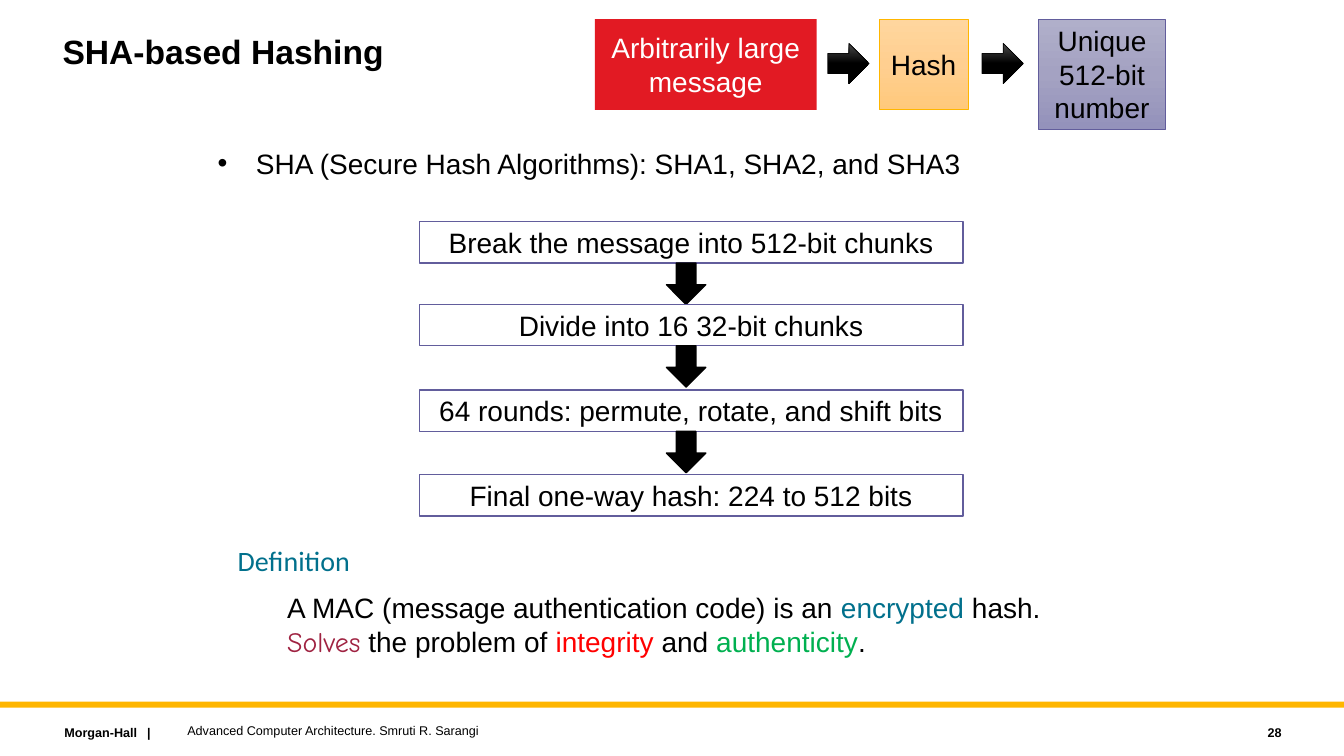
import pptx
import pptx.dml.color
import pptx.enum.shapes
import pptx.enum.text
import pptx.oxml
import pptx.oxml.ns
import pptx.util

KIND = pptx.enum.shapes.MSO_SHAPE
ALIGN = pptx.enum.text.PP_ALIGN
ANCHOR = pptx.enum.text.MSO_ANCHOR
NS = pptx.oxml.ns.nsdecls("a")

BLACK, WHITE = "000000", "FFFFFF"
TEAL, GOLD, VIOLET = "01708C", "FFB600", "625D9C"
INK = (0, "4B4B4B"), (50, BLACK), (100, BLACK)
PEACH = (0, "FFD69E"), (50, "FFCF90"), (100, "FFC97C")
LILAC = (0, "B0AFCA"), (50, "A4A2C2"), (100, "9492BB")


def px(*lengths):
    """Turn lengths at 100 px to the inch into EMU."""
    return [n * 9144 for n in lengths]


def rgb(code):
    return pptx.dml.color.RGBColor.from_string(code)


def make(xml):
    return pptx.oxml.parse_xml(xml)


class Deck:
    def __init__(self):
        self.font, self.size = "Arial", 20
        self.show = pptx.Presentation()
        self.show.slide_width, self.show.slide_height = px(1333, 750)
        self.slide = self.show.slides.add_slide(self.show.slide_layouts[5])

    def fill_text(self, frame, lines, size=None, bold=False, align=ALIGN.LEFT,
                  anchor=ANCHOR.TOP, wrap=True):
        """Fill a frame; each line is a list of (text, colour[, font]) runs."""
        frame.word_wrap = wrap
        frame.auto_size = pptx.enum.text.MSO_AUTO_SIZE.NONE
        frame.vertical_anchor = anchor
        for i, line in enumerate(lines):
            para = frame.add_paragraph() if i else frame.paragraphs[0]
            para.alignment = align
            for text, tint, *face in line:
                run = para.add_run()
                run.text = text
                run.font.name = face[0] if face else self.font
                run.font.size = pptx.util.Pt(size or self.size)
                run.font.bold = bold
                run.font.color.rgb = rgb(tint)

    def title(self, box, text):
        head = self.slide.shapes.title
        head.left, head.top, head.width, head.height = px(*box)
        self.fill_text(head.text_frame, [[(text, BLACK)]], 24, True)
        head.text_frame.paragraphs[0].line_spacing = 0.9

    def text(self, box, lines, **style):
        """Add a text box and return its first paragraph."""
        frame = self.slide.shapes.add_textbox(*px(*box)).text_frame
        self.fill_text(frame, lines, **style)
        return frame.paragraphs[0]

    def bullet(self, box, text):
        props = self.text(box, [[(text, BLACK)]])._p.get_or_add_pPr()
        indent = px(38)[0]
        props.set("marL", str(indent))
        props.set("indent", str(-indent))
        props.append(make(f'<a:buFont {NS} typeface="Arial"/>'))
        props.append(make(f'<a:buChar {NS} char="•"/>'))

    def tab(self, para, at):
        stops = f'<a:tabLst {NS}><a:tab pos="{px(at)[0]}" algn="l"/></a:tabLst>'
        para._p.get_or_add_pPr().append(make(stops))

    def shape(self, kind, box, fill, line=None, weight=1.0, text="", tint=BLACK):
        """Add a preset shape; fill is a colour or a tuple of (percent, colour)."""
        item = self.slide.shapes.add_shape(kind, *px(*box))
        item.shadow.inherit = False
        if isinstance(fill, str):
            item.fill.solid()
            item.fill.fore_color.rgb = rgb(fill)
        else:
            self.blend(item, fill)
        if line:
            item.line.color.rgb = rgb(line)
            item.line.width = pptx.util.Pt(weight)
        else:
            item.line.fill.background()
        if text:
            self.fill_text(item.text_frame, [[(text, tint)]],
                           align=ALIGN.CENTER, anchor=ANCHOR.MIDDLE)

    def blend(self, item, stops):
        """Set a gradient that runs from top to bottom."""
        item.fill.gradient()
        item.fill.gradient_angle = 270
        marks = item.element.spPr.find(".//" + pptx.oxml.ns.qn("a:gsLst"))
        for mark in list(marks):
            marks.remove(mark)
        for at, tint in stops:
            marks.append(make(f'<a:gs {NS} pos="{at * 1000}">'
                              f'<a:srgbClr val="{tint}"/></a:gs>'))


def main():
    deck = Deck()

    # Footer
    deck.shape(KIND.RECTANGLE, (0, 696, 1333, 6), GOLD)
    house = deck.text((54, 714, 227, 25), [[("Morgan-Hall\t|", BLACK)]],
                      size=9, bold=True)
    deck.tab(house, 82)
    deck.text((176, 712, 800, 25),
              [[("Advanced Computer Architecture. Smruti R. Sarangi", BLACK)]],
              size=9, anchor=ANCHOR.MIDDLE)
    deck.text((1141, 714, 140, 25), [[("28", BLACK)]], size=9, bold=True,
              align=ALIGN.RIGHT, anchor=ANCHOR.MIDDLE)

    # Heading
    deck.title((52, 30, 1000, 90), "SHA-based Hashing")
    deck.bullet((206, 140, 911, 54),
                "SHA (Secure Hash Algorithms): SHA1, SHA2, and SHA3")

    # Steps of the hash
    steps = [
        (220, "Break the message into 512-bit chunks"),
        (302, "Divide into 16 32-bit chunks"),
        (387, "64 rounds: permute, rotate, and shift bits"),
        (471, "Final one-way hash: 224 to 512 bits"),
    ]
    high = 41
    for i, (top, step) in enumerate(steps):
        if i:
            above = steps[i - 1][0]
            deck.shape(KIND.DOWN_ARROW, (661, above + high, 39, high), BLACK, BLACK)
        deck.shape(KIND.RECTANGLE, (416, top, 539, high), WHITE, VIOLET, text=step)

    # Definition
    deck.text((226, 534, 133, 44), [[("Definition", TEAL, "Calibri")]], wrap=False)
    deck.text((275, 581, 772, 77), [
        [("A MAC (message authentication code) is an ", BLACK),
         ("encrypted", TEAL), (" hash.", BLACK)],
        [("Solves", "9F2241", "Comic Neue"), (" the problem of ", BLACK),
         ("integrity", "FF0000"), (" and ", BLACK),
         ("authenticity", "00B050"), (".", BLACK)],
    ], wrap=False)

    # Message to number
    deck.shape(KIND.RECTANGLE, (590, 19, 220, 90), "E21A23",
               text="Arbitrarily large message", tint=WHITE)
    deck.shape(KIND.RECTANGLE, (872, 19, 88, 90), PEACH, GOLD, 0.5, "Hash")
    deck.shape(KIND.RECTANGLE, (1030, 19, 126, 109), LILAC, VIOLET, 0.5,
               "Unique 512-bit number")
    for left in (821, 974):
        deck.shape(KIND.RIGHT_ARROW, (left, 43, 41, 40), INK, BLACK, 0.5)

    deck.show.save("out.pptx")


if __name__ == "__main__":
    main()
